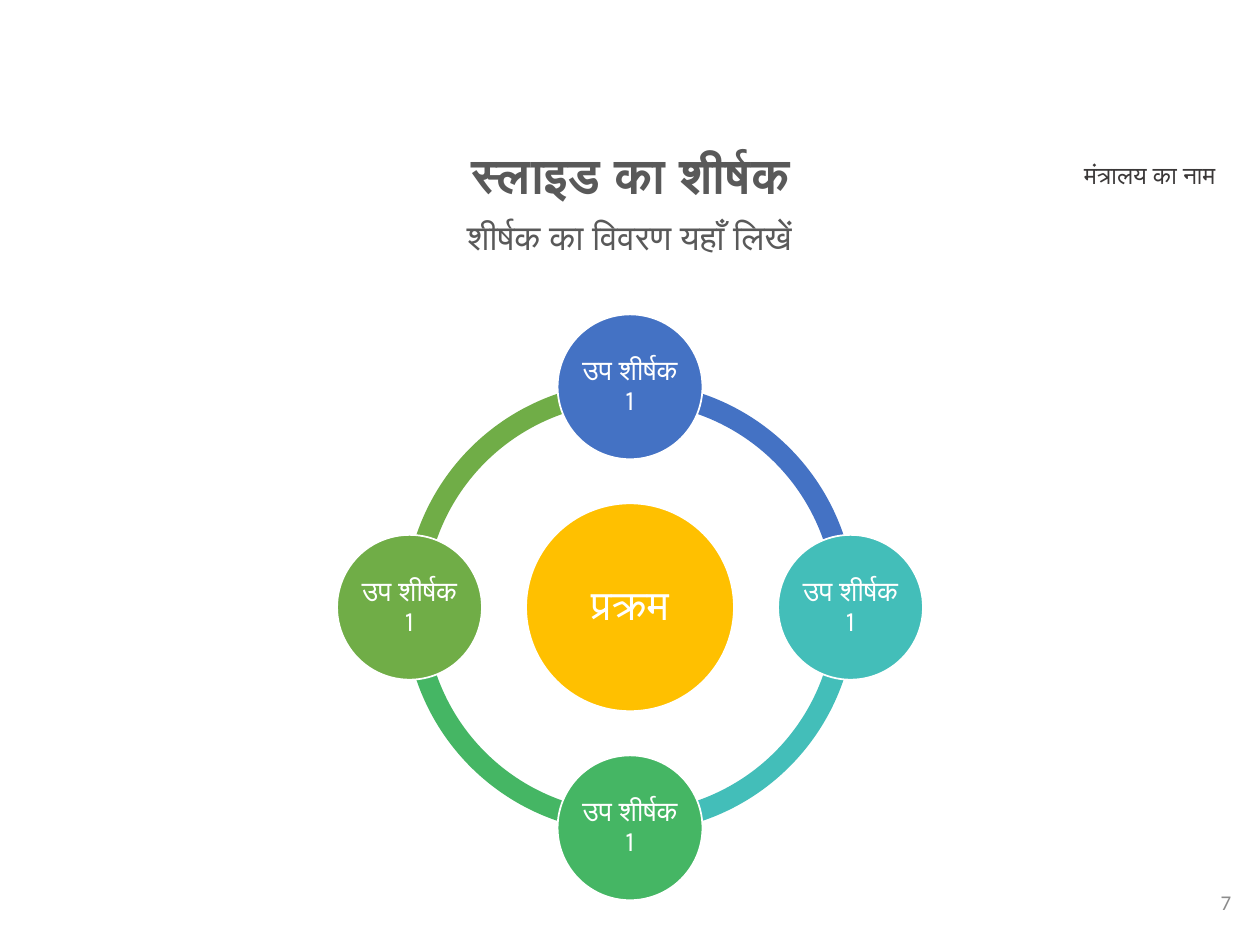
import math

from pptx import Presentation, util as u
from pptx.dml.color import RGBColor
from pptx.enum import shapes, text

COLORS = {
    "white": "FFFFFF", "heading": "595959", "ministry": "3B3838", "number": "8C8C8C",
    "blue": "4472C4", "teal": "43BEB9", "green": "45B664", "olive": "70AD47",
    "gold": "FFC000",
}
CENTER_X, CENTER_Y = 5, 4.82
ORBIT = 1.75
RING_SIZE, RING_THICKNESS = 3.58, 0.046
HUB_SIZE, NODE_SIZE = 1.65, 1.15

# Clockwise from the top: colour and label of each node and the arc after it
STEPS = [
    ("blue", "उप शीर्षक 1"),
    ("teal", "उप शीर्षक 1"),
    ("green", "उप शीर्षक 1"),
    ("olive", "उप शीर्षक 1"),
]


def rgb(color):
    return RGBColor.from_string(COLORS[color])


def write(frame, words, size, color, font="Calibri", bold=False,
          align=text.PP_ALIGN.CENTER, spacing=None):
    frame.word_wrap = True
    paragraph = frame.paragraphs[0]
    paragraph.text = words
    paragraph.alignment = align
    paragraph.line_spacing = spacing
    paragraph.font.name = font
    paragraph.font.size = u.Pt(size)
    paragraph.font.bold = bold
    paragraph.font.color.rgb = rgb(color)


def add_label(slide, left, top, width, height, words, size, color, **style):
    box = slide.shapes.add_textbox(*map(u.Inches, (left, top, width, height)))
    write(box.text_frame, words, size, color, **style)
    return box.text_frame


def add_centered(slide, kind, x, y, size, color):
    shape = slide.shapes.add_shape(
        kind, u.Inches(x - size / 2), u.Inches(y - size / 2), u.Inches(size), u.Inches(size))
    shape.shadow.inherit = False
    shape.fill.solid()
    shape.fill.fore_color.rgb = rgb(color)
    return shape


def add_arc(slide, start, end, color):
    arc = add_centered(slide, shapes.MSO_SHAPE.BLOCK_ARC, CENTER_X, CENTER_Y, RING_SIZE, color)
    arc.line.fill.background()
    # Angles are stored in 60000ths of a degree, adjustments in 100000ths
    arc.adjustments[0] = start % 360 * 0.6
    arc.adjustments[1] = end % 360 * 0.6
    arc.adjustments[2] = RING_THICKNESS


def add_circle(slide, x, y, size, color, words, font_size, inset):
    circle = add_centered(slide, shapes.MSO_SHAPE.OVAL, x, y, size, color)
    circle.line.color.rgb = rgb("white")
    circle.line.width = u.Pt(1)
    frame = circle.text_frame
    frame.margin_left = frame.margin_right = u.Inches(inset)
    frame.margin_top = frame.margin_bottom = u.Inches(inset)
    frame.vertical_anchor = text.MSO_ANCHOR.MIDDLE
    write(frame, words, font_size, "white", font="Karla", spacing=0.9)


def add_cycle(slide):
    angles = [-90 + i * 360 / len(STEPS) for i in range(len(STEPS))]

    # Ring
    for angle, (color, _) in reversed(list(zip(angles, STEPS))):
        add_arc(slide, angle, angle + 360 / len(STEPS), color)

    # Hub and nodes
    add_circle(slide, CENTER_X, CENTER_Y, HUB_SIZE, "gold", "प्रक्रम", 24, 0.03)
    for angle, (color, words) in zip(angles, STEPS):
        x = CENTER_X + ORBIT * math.cos(math.radians(angle))
        y = CENTER_Y + ORBIT * math.sin(math.radians(angle))
        add_circle(slide, x, y, NODE_SIZE, color, words, 16, 0.02)


def main():
    deck = Presentation()
    deck.slide_width, deck.slide_height = u.Inches(10), u.Inches(7.5)
    slide = deck.slides.add_slide(deck.slide_layouts[6])

    # Ministry name and slide number
    ministry = add_label(slide, 8.31, 1.22, 1.63, 0.34, "मंत्रालय का नाम", 14, "ministry")
    ministry.auto_size = text.MSO_AUTO_SIZE.SHAPE_TO_FIT_TEXT
    number = add_label(slide, 7.62, 6.96, 2.25, 0.4, "7", 12, "number",
                       align=text.PP_ALIGN.RIGHT)
    number.vertical_anchor = text.MSO_ANCHOR.MIDDLE

    # Headings
    add_label(slide, 1.46, 1.7, 7.07, 0.63, "शीर्षक का विवरण यहाँ लिखें", 20, "heading",
              spacing=0.9)
    add_label(slide, 1.86, 1.15, 6.29, 0.47, "स्लाइड का शीर्षक", 28, "heading",
              bold=True, spacing=0.9)

    add_cycle(slide)
    deck.save("out.pptx")


if __name__ == "__main__":
    main()
